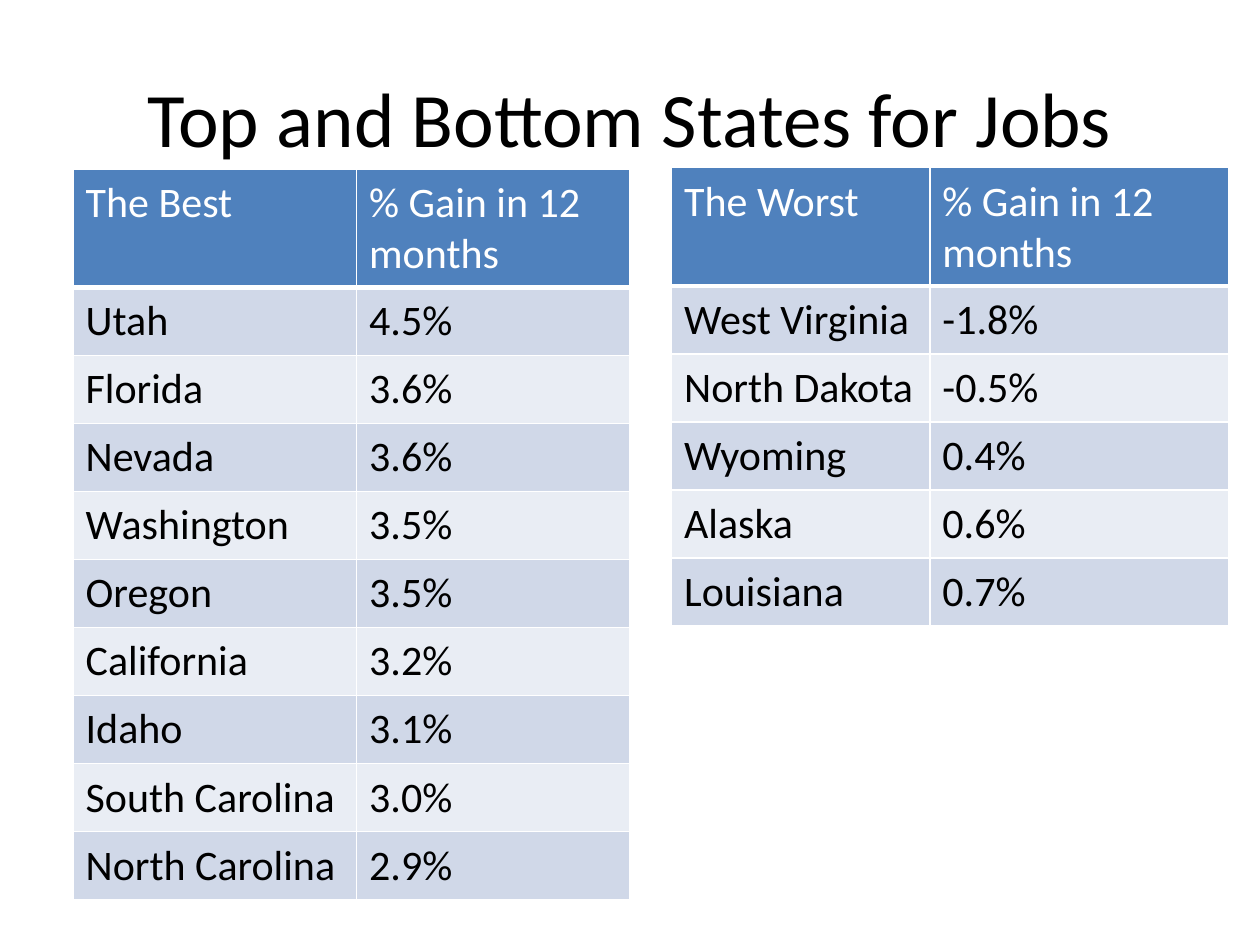
from dataclasses import dataclass

from lxml.etree import SubElement
from pptx import Presentation
from pptx.dml.color import RGBColor
from pptx.enum.text import MSO_ANCHOR as Anchor, PP_ALIGN as Align
from pptx.oxml.ns import qn
from pptx.util import Inches, Pt

COLORS = {
    "white": "FFFFFF",
    "black": "000000",
    "header": "4F81BD",
    "dark_band": "D0D8E8",
    "light_band": "E9EDF4",
}
HEADER_HEIGHT = 0.94
STATE_HEIGHT = 0.54


@dataclass
class Ranking:
    heading: str
    left: float
    top: float
    widths: tuple[float, float]
    states: list[tuple[str, str]]


RANKINGS = [
    Ranking("The Best", 0.58, 1.34, (2.25, 2.17), [
        ("Utah", "4.5%"),
        ("Florida", "3.6%"),
        ("Nevada", "3.6%"),
        ("Washington", "3.5%"),
        ("Oregon", "3.5%"),
        ("California", "3.2%"),
        ("Idaho", "3.1%"),
        ("South Carolina", "3.0%"),
        ("North Carolina", "2.9%"),
    ]),
    Ranking("The Worst", 5.33, 1.33, (2.05, 2.37), [
        ("West Virginia", "-1.8%"),
        ("North Dakota", "-0.5%"),
        ("Wyoming", "0.4%"),
        ("Alaska", "0.6%"),
        ("Louisiana", "0.7%"),
    ]),
]


def write(frame, text: str, *, size: float, color: str, align=Align.LEFT) -> None:
    frame.word_wrap = True
    paragraph = frame.paragraphs[0]
    paragraph.alignment = align
    run = paragraph.add_run()
    run.text = text
    run.font.name = "Calibri"
    run.font.size = Pt(size)
    run.font.color.rgb = RGBColor.from_string(COLORS[color])


def add_borders(cell, bottom: float) -> None:
    properties = cell._tc.get_or_add_tcPr()
    for side, width in (("L", 1), ("R", 1), ("T", 1), ("B", bottom)):
        line = SubElement(properties, qn(f"a:ln{side}"), w=str(Pt(width)))
        fill = SubElement(line, qn("a:solidFill"))
        SubElement(fill, qn("a:srgbClr"), val=COLORS["white"])


def format_cell(cell, text: str, row: int) -> None:
    is_header = row == 0
    band = "header" if is_header else "dark_band" if row % 2 else "light_band"
    add_borders(cell, bottom=3 if is_header else 1)
    cell.fill.solid()
    cell.fill.fore_color.rgb = RGBColor.from_string(COLORS[band])
    cell.margin_left = cell.margin_right = Inches(0.1)
    cell.margin_top, cell.margin_bottom = Inches(0.07), Inches(0.06)
    write(cell.text_frame, text, size=24, color="white" if is_header else "black")


def add_ranking(slide, ranking: Ranking) -> None:
    rows = [(ranking.heading, "% Gain in 12 months"), *ranking.states]
    height = HEADER_HEIGHT + STATE_HEIGHT * len(ranking.states)
    table = slide.shapes.add_table(
        len(rows), 2, Inches(ranking.left), Inches(ranking.top),
        Inches(sum(ranking.widths)), Inches(height),
    ).table
    for column, width in zip(table.columns, ranking.widths):
        column.width = Inches(width)
    for index, values in enumerate(rows):
        table.rows[index].height = Inches(STATE_HEIGHT if index else HEADER_HEIGHT)
        for column, value in enumerate(values):
            format_cell(table.cell(index, column), value, index)


def main() -> None:
    deck = Presentation()
    deck.slide_width, deck.slide_height = Inches(10), Inches(7.5)
    slide = deck.slides.add_slide(deck.slide_layouts[6])
    title = slide.shapes.add_textbox(
        Inches(0.5), Inches(0.3), Inches(9), Inches(1.25)
    ).text_frame
    title.vertical_anchor = Anchor.MIDDLE
    write(title, "Top and Bottom States for Jobs", size=44, color="black",
          align=Align.CENTER)
    for ranking in RANKINGS:
        add_ranking(slide, ranking)
    deck.save("out.pptx")


if __name__ == "__main__":
    main()
